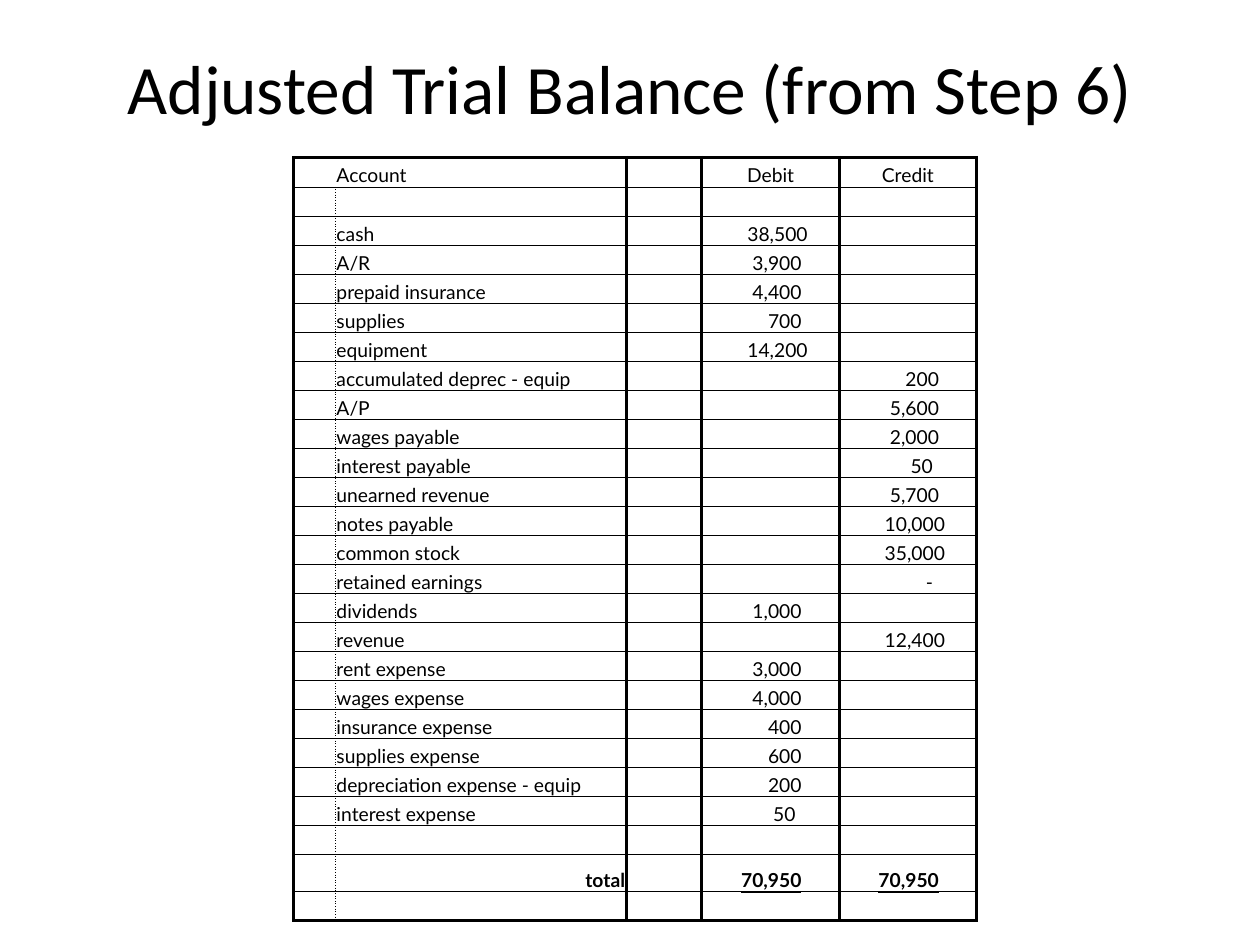
from lxml import etree
from pptx import Presentation
from pptx import util as u
from pptx.dml import color
from pptx.enum import text
from pptx.oxml import ns

BLACK = "000000"
LEFT, CENTER, RIGHT = text.PP_ALIGN.LEFT, text.PP_ALIGN.CENTER, text.PP_ALIGN.RIGHT
NO_STYLE = "{2D5ABB26-0587-4C30-8999-92F81FD0307C}"
THICK, THIN, DOTTED, NONE = (2, "solid"), (0.5, "solid"), (0.5, "dot"), None

COLUMN_WIDTHS = [23.8, 166.3, 43.2, 78.5, 78.5]
ROW_HEIGHT, HEADER_HEIGHT, TOTAL_HEIGHT = 16.6, 17, 20.9

ACCOUNTS = [
    ("cash", "38,500", ""),
    ("A/R", "3,900", ""),
    ("prepaid insurance", "4,400", ""),
    ("supplies", "700", ""),
    ("equipment", "14,200", ""),
    ("accumulated deprec - equip", "", "200"),
    ("A/P", "", "5,600"),
    ("wages payable", "", "2,000"),
    ("interest payable", "", "50"),
    ("unearned revenue", "", "5,700"),
    ("notes payable", "", "10,000"),
    ("common stock", "", "35,000"),
    ("retained earnings", "", "-"),
    ("dividends", "1,000", ""),
    ("revenue", "", "12,400"),
    ("rent expense", "3,000", ""),
    ("wages expense", "4,000", ""),
    ("insurance expense", "400", ""),
    ("supplies expense", "600", ""),
    ("depreciation expense - equip", "200", ""),
    ("interest expense", "50", ""),
]
BLANK = ("", "", "")
ROWS = [("Account", "Debit", "Credit"), BLANK, *ACCOUNTS, BLANK,
        ("total", "70,950", "70,950"), BLANK]
TOTAL_ROW = len(ROWS) - 2


def rgb(value):
    return color.RGBColor.from_string(value)


def write(frame, content, font="Lato", size=11, fill=BLACK, align=LEFT,
          bold=False, underline=False):
    paragraph = frame.paragraphs[0]
    paragraph.alignment = align
    if not content:
        end = etree.SubElement(paragraph._p, ns.qn("a:endParaRPr"))
        end.set("sz", str(size * 100))
        return
    run = paragraph.add_run()
    run.text = content
    run.font.name = font
    run.font.size = u.Pt(size)
    run.font.bold = bold
    run.font.underline = underline
    run.font.color.rgb = rgb(fill)


def add_title(slide, content):
    box = slide.shapes.add_textbox(u.Pt(36), u.Pt(21.6), u.Pt(648), u.Pt(56.2))
    frame = box.text_frame
    frame.word_wrap = True
    frame.vertical_anchor = text.MSO_ANCHOR.MIDDLE
    write(frame, content, font="Calibri", size=39.6, align=CENTER)


def set_borders(cell, left, right, top, bottom):
    properties = cell._tc.get_or_add_tcPr()
    sides = [("lnL", left), ("lnR", right), ("lnT", top), ("lnB", bottom)]
    for index, (tag, style) in enumerate(sides):
        line = etree.Element(ns.qn("a:" + tag))
        properties.insert(index, line)
        if style is NONE:
            etree.SubElement(line, ns.qn("a:noFill"))
            continue
        width, dash = style
        line.set("w", str(int(u.Pt(width))))
        fill = etree.SubElement(line, ns.qn("a:solidFill"))
        etree.SubElement(fill, ns.qn("a:srgbClr")).set("val", BLACK)
        etree.SubElement(line, ns.qn("a:prstDash")).set("val", dash)


def amount_inset(amount):
    if len(amount) < 3:
        return 25
    return 18 if len(amount) == 6 else 21.5


def fill_cell(cell, row, column, content):
    header, total = row == 0, row == TOTAL_ROW
    amount = column > 2 and not header
    cell.fill.background()
    cell.vertical_anchor = text.MSO_ANCHOR.BOTTOM
    cell.margin_left = cell.margin_top = cell.margin_right = u.Pt(0.7)
    cell.margin_bottom = 0
    if amount and content:
        cell.margin_right = u.Pt(21.5 if total else amount_inset(content))
    if header:
        align = CENTER if column > 2 else LEFT
    else:
        align = RIGHT if amount or total else LEFT
    write(cell.text_frame, content, align=align, bold=total,
          underline=total and amount)
    divider = NONE if header else DOTTED
    set_borders(cell,
                left=divider if column == 1 else THICK,
                right=divider if column == 0 else THICK,
                top=THICK if header else THIN,
                bottom=THICK if row == len(ROWS) - 1 else THIN)


def add_trial_balance(slide):
    heights = [ROW_HEIGHT] * len(ROWS)
    heights[0], heights[TOTAL_ROW] = HEADER_HEIGHT, TOTAL_HEIGHT
    frame = slide.shapes.add_table(
        len(ROWS), len(COLUMN_WIDTHS), u.Pt(167.8), u.Pt(90),
        u.Pt(sum(COLUMN_WIDTHS)), u.Pt(sum(heights)))
    table = frame.table
    table.first_row = table.horz_banding = False
    table._tbl.tblPr.find(ns.qn("a:tableStyleId")).text = NO_STYLE
    for column, width in zip(table.columns, COLUMN_WIDTHS):
        column.width = u.Pt(width)
    for row, height in zip(table.rows, heights):
        row.height = u.Pt(height)
    for row, (account, debit, credit) in enumerate(ROWS):
        for column, content in enumerate(["", account, "", debit, credit]):
            fill_cell(table.cell(row, column), row, column, content)


def main():
    presentation = Presentation()
    presentation.slide_width, presentation.slide_height = u.Pt(720), u.Pt(540)
    slide = presentation.slides.add_slide(presentation.slide_layouts[6])
    add_title(slide, "Adjusted Trial Balance (from Step 6)")
    add_trial_balance(slide)
    presentation.save("out.pptx")


if __name__ == "__main__":
    main()
